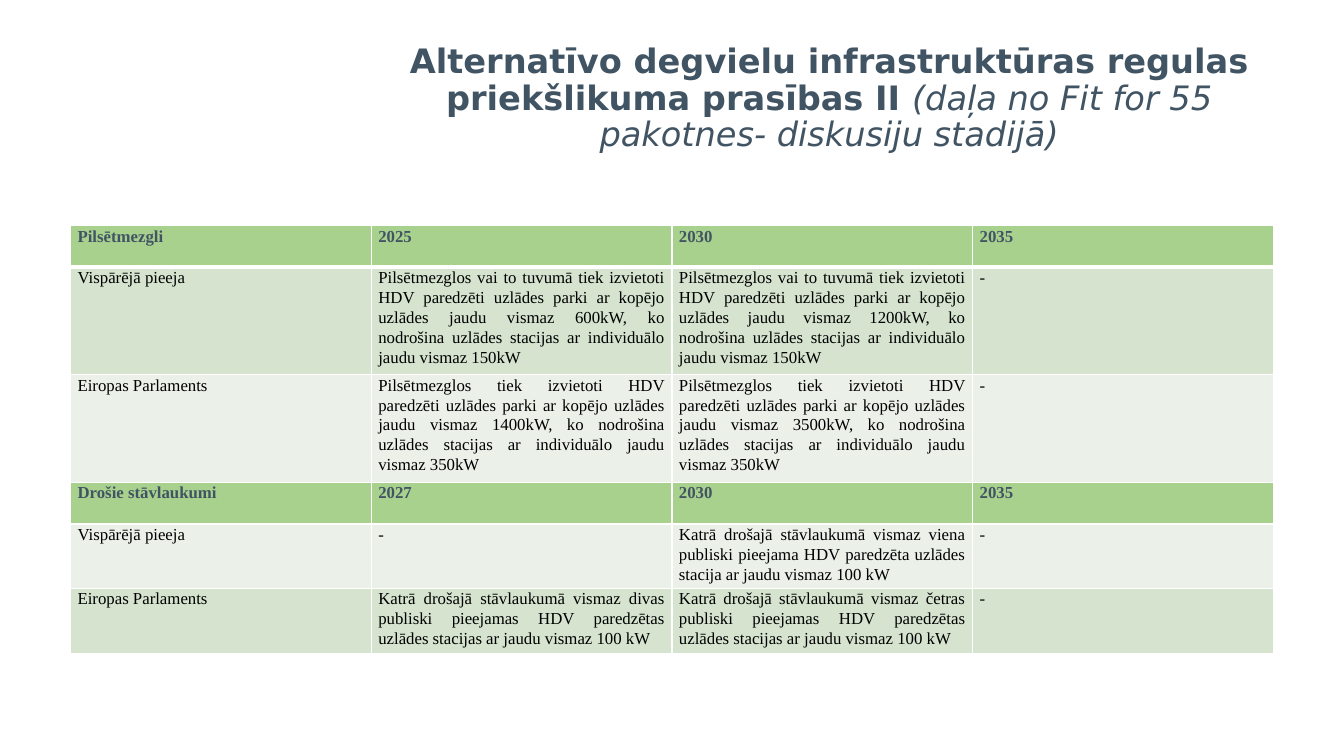
from lxml import etree
from pptx import Presentation
from pptx.dml.color import RGBColor
from pptx.enum.text import MSO_ANCHOR, PP_ALIGN
from pptx.oxml.ns import qn
from pptx.util import Inches, Pt

CENTER = PP_ALIGN.CENTER
JUSTIFY = PP_ALIGN.JUSTIFY
MIDDLE = MSO_ANCHOR.MIDDLE
SLATE = RGBColor(0x41, 0x54, 0x63)
BLACK = RGBColor(0x00, 0x00, 0x00)
GREEN = RGBColor(0xA9, 0xD1, 0x8E)
SAGE = RGBColor(0xD5, 0xE3, 0xCF)
MIST = RGBColor(0xEB, 0xF1, 0xE9)
WHITE = RGBColor(0xFF, 0xFF, 0xFF)


def apply_format(target, values):
    for name, value in values.items():
        setattr(target, name, value)


def add_border(cell, side, points):
    line = etree.SubElement(cell._tc.get_or_add_tcPr(), qn("a:" + side), w=str(Pt(points)))
    fill = etree.SubElement(line, qn("a:solidFill"))
    etree.SubElement(fill, qn("a:srgbClr"), val=str(WHITE))


deck = Presentation()
deck.slide_width = Inches(13.33)
deck.slide_height = Inches(7.5)
page = deck.slides.add_slide(deck.slide_layouts[6])

title_box = page.shapes.add_textbox(Inches(3.78), Inches(0.42), Inches(8.89), Inches(1.13))
apply_format(title_box.text_frame, {"word_wrap": True, "vertical_anchor": MIDDLE})
title_para = title_box.text_frame.paragraphs[0]
apply_format(title_para, {"alignment": CENTER, "line_spacing": 0.9})
title_spans = [
    ("Alternatīvo degvielu infrastruktūras regulas priekšlikuma prasības II ", True),
    ("(daļa no Fit for 55 pakotnes- diskusiju stadijā)", False),
]
for words, strong in title_spans:
    span = title_para.add_run()
    span.text = words
    apply_format(span.font, {"name": "DejaVu Sans", "size": Pt(24), "bold": strong, "italic": not strong})
    span.font.color.rgb = SLATE

GENERAL = "Vispārējā pieeja"
PARLIAMENT = "Eiropas Parlaments"
NEARBY = (
    "Pilsētmezglos vai to tuvumā tiek izvietoti HDV paredzēti uzlādes parki ar kopējo uzlādes jaudu "
    "vismaz {}kW, ko nodrošina uzlādes stacijas ar individuālo jaudu vismaz 150kW"
)
INSIDE = (
    "Pilsētmezglos tiek izvietoti HDV paredzēti uzlādes parki ar kopējo uzlādes jaudu "
    "vismaz {}kW, ko nodrošina uzlādes stacijas ar individuālo jaudu vismaz 350kW"
)
PARKING = (
    "Katrā drošajā stāvlaukumā vismaz {} publiski pieejamas HDV paredzētas "
    "uzlādes stacijas ar jaudu vismaz 100 kW"
)
SINGLE = (
    "Katrā drošajā stāvlaukumā vismaz viena publiski pieejama HDV paredzēta "
    "uzlādes stacija ar jaudu vismaz 100 kW"
)
requirements = [
    (GREEN, ["Pilsētmezgli", "2025", "2030", "2035"]),
    (SAGE, [GENERAL, NEARBY.format(600), NEARBY.format(1200), "-"]),
    (MIST, [PARLIAMENT, INSIDE.format(1400), INSIDE.format(3500), "-"]),
    (GREEN, ["Drošie stāvlaukumi", "2027", "2030", "2035"]),
    (MIST, [GENERAL, "-", SINGLE, "-"]),
    (SAGE, [PARLIAMENT, PARKING.format("divas"), PARKING.format("četras"), "-"]),
]

ROW_HEIGHT = Inches(0.41)
table = page.shapes.add_table(
    len(requirements), 4, Inches(0.7), Inches(2.24), Inches(11.93), ROW_HEIGHT * len(requirements)
).table
apply_format(table, {"first_row": False, "horz_banding": False})
side_margin = Inches(0.07)
margins = {"margin_left": side_margin, "margin_right": side_margin, "margin_top": 0, "margin_bottom": 0}

for row, (shade, texts) in enumerate(requirements):
    heading = shade == GREEN
    for column, words in enumerate(texts):
        cell = table.cell(row, column)
        apply_format(cell, margins)
        for side in ("lnL", "lnR", "lnT", "lnB"):
            under_header = (row, side) in ((0, "lnB"), (1, "lnT"))
            add_border(cell, side, 3 if under_header else 1)
        cell.fill.solid()
        cell.fill.fore_color.rgb = shade
        para = cell.text_frame.paragraphs[0]
        apply_format(para, {"alignment": JUSTIFY, "line_spacing": 1.07, "space_after": Pt(8)})
        span = para.add_run()
        span.text = words
        apply_format(span.font, {"name": "Times New Roman", "size": Pt(12), "bold": heading})
        span.font.color.rgb = SLATE if heading else BLACK

deck.save("out.pptx")
